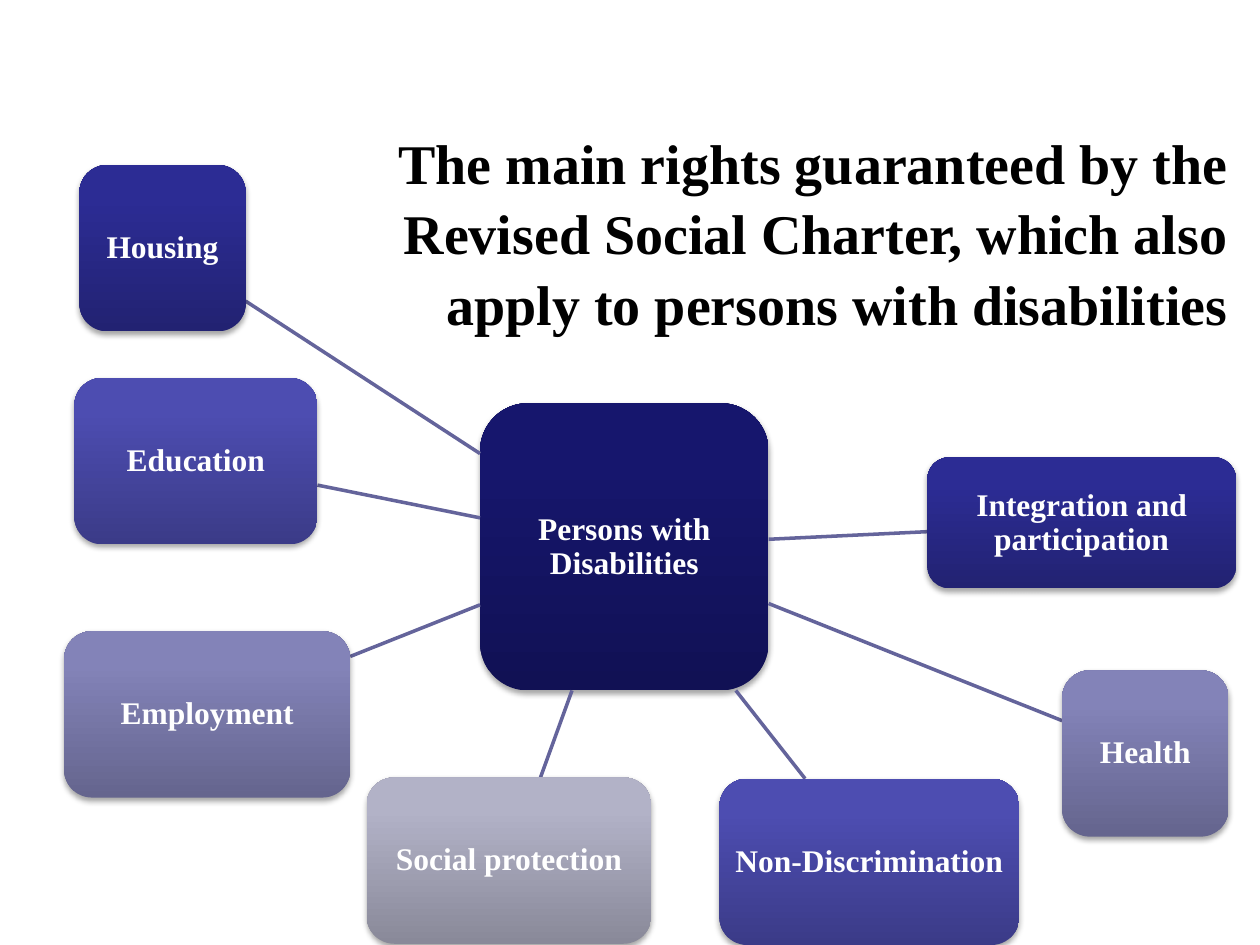
from lxml import etree
from pptx import Presentation
from pptx.dml.color import RGBColor
from pptx.enum.shapes import MSO_CONNECTOR, MSO_SHAPE
from pptx.enum.text import MSO_ANCHOR, MSO_AUTO_SIZE, PP_ALIGN
from pptx.oxml import parse_xml
from pptx.oxml.ns import nsdecls, qn
from pptx.util import Inches, Pt

FONT = "Times New Roman"
BLACK = RGBColor(0x00, 0x00, 0x00)
WHITE = RGBColor(0xFF, 0xFF, 0xFF)
LINE = RGBColor(0x64, 0x64, 0x9B)

# Gradients: bottom colour, top colour
NAVY = (RGBColor(0x11, 0x11, 0x54), RGBColor(0x16, 0x16, 0x6D))
BLUE = (RGBColor(0x22, 0x22, 0x72), RGBColor(0x2C, 0x2C, 0x94))
INDIGO = (RGBColor(0x3B, 0x3B, 0x88), RGBColor(0x4D, 0x4D, 0xB1))
LAVENDER = (RGBColor(0x65, 0x65, 0x8E), RGBColor(0x83, 0x83, 0xB8))
GREY = (RGBColor(0x89, 0x89, 0x99), RGBColor(0xB2, 0xB2, 0xC7))

SHADOW = (f'<a:outerShdw {nsdecls("a")} blurRad="40000" dist="23000" dir="5400000" '
          'rotWithShape="0"><a:srgbClr val="000000"><a:alpha val="35000"/>'
          '</a:srgbClr></a:outerShdw>')

prs = Presentation()
prs.slide_width, prs.slide_height = Inches(10), Inches(7.5)
s = prs.slides.add_slide(prs.slide_layouts[5])

# Title, sitting above the middle of its box
title = s.shapes.title
title.left, title.top = Inches(2.13), Inches(1.15)
title.width, title.height = Inches(7.72), Inches(1.89)
tf = title.text_frame
tf.auto_size = MSO_AUTO_SIZE.NONE
tf.word_wrap = True
tf.vertical_anchor = MSO_ANCHOR.MIDDLE
tf.margin_bottom = Inches(0.58)
p = tf.paragraphs[0]
p.text = ("The main rights guaranteed by the Revised Social Charter, "
          "which also apply to persons with disabilities")
p.alignment = PP_ALIGN.RIGHT
p.line_spacing = 1.05
p.font.name, p.font.size, p.font.bold = FONT, Pt(32), True
p.font.color.rgb = BLACK

# Boxes: text, (left, top, width, height), gradient, spoke from hub to box
boxes = [
    ("Persons with Disabilities", (3.81, 3.2, 2.29, 2.28), NAVY, None),
    ("Housing", (0.63, 1.31, 1.32, 1.32), BLUE, (3.81, 3.6, 1.95, 2.39)),
    ("Non-Discrimination", (5.71, 6.18, 2.38, 1.32), INDIGO, (5.84, 5.48, 6.39, 6.18)),
    ("Health", (8.43, 5.32, 1.32, 1.32), LAVENDER, (6.1, 4.79, 8.43, 5.72)),
    ("Social protection", (2.91, 6.17, 2.26, 1.32), GREY, (4.54, 5.48, 4.29, 6.17)),
    ("Employment", (0.51, 5.01, 2.27, 1.32), LAVENDER, (3.81, 4.8, 2.78, 5.21)),
    ("Education", (0.59, 3, 1.93, 1.32), INDIGO, (3.81, 4.11, 2.52, 3.85)),
    ("Integration and participation", (7.36, 3.63, 2.45, 1.04), BLUE,
     (6.1, 4.28, 7.36, 4.22)),
]

for text, place, colors, spoke in boxes:
    # Spoke
    if spoke:
        line = s.shapes.add_connector(MSO_CONNECTOR.STRAIGHT, *map(Inches, spoke))
        line.line.color.rgb = LINE
        line.line.width = Pt(2)
        etree.SubElement(line._element.spPr, qn("a:effectLst"))

    # Rounded box with gradient and soft shadow
    box = s.shapes.add_shape(MSO_SHAPE.ROUNDED_RECTANGLE, *map(Inches, place))
    box.line.fill.background()
    box.fill.gradient()
    box.fill.gradient_angle = 90
    for stop, color, position in zip(box.fill.gradient_stops, colors, (0, 0.8)):
        stop.color.rgb = color
        stop.position = position
    box.shadow.inherit = False
    box._element.spPr.find(qn("a:effectLst")).append(parse_xml(SHADOW))

    # Label
    tf = box.text_frame
    tf.word_wrap = True
    tf.vertical_anchor = MSO_ANCHOR.MIDDLE
    tf.margin_left = tf.margin_right = tf.margin_top = tf.margin_bottom = Inches(0.05)
    p = tf.paragraphs[0]
    p.text = text
    p.alignment = PP_ALIGN.CENTER
    p.line_spacing = 0.9
    p.font.name, p.font.size, p.font.bold = FONT, Pt(18), True
    p.font.color.rgb = WHITE

prs.save("out.pptx")
